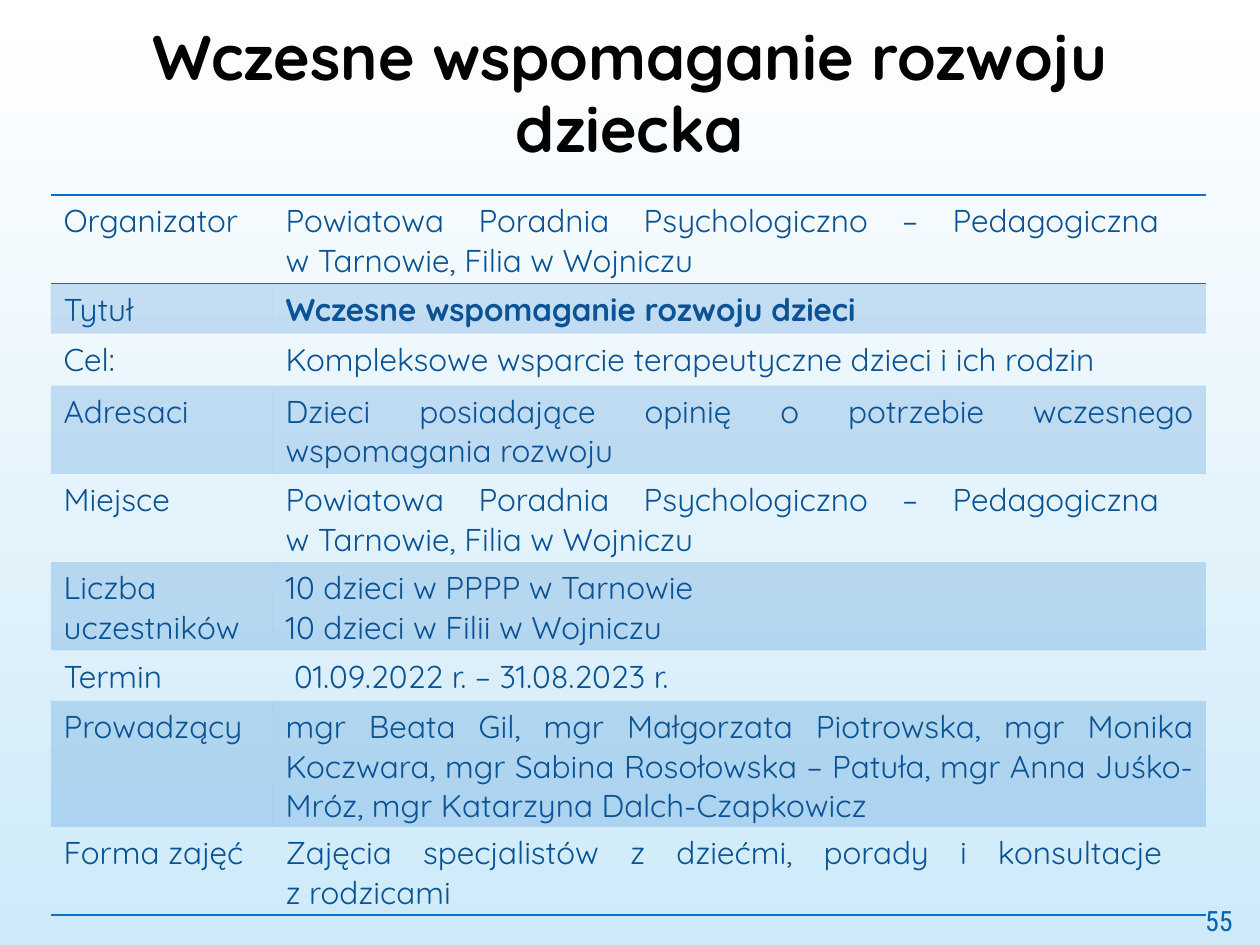
from dataclasses import dataclass
from lxml.etree import SubElement as Sub
from pptx import Presentation
from pptx.dml.color import RGBColor as RGB
from pptx.enum.text import MSO_ANCHOR as Anchor, PP_ALIGN as Align
from pptx.oxml.ns import qn
from pptx.util import Emu, Pt

# Content
TITLE = "Wczesne wspomaganie rozwoju dziecka"
PLACE = "Powiatowa Poradnia Psychologiczno – Pedagogiczna \vw Tarnowie, Filia w Wojniczu"
# label, text, row height in px
ROWS = [
    ("Organizator", PLACE, 87),
    ("Tytuł", "Wczesne wspomaganie rozwoju dzieci", 49),
    ("Cel:", "Kompleksowe wsparcie terapeutyczne dzieci i ich rodzin", 52),
    ("Adresaci", "Dzieci posiadające opinię o potrzebie wczesnego wspomagania rozwoju", 87),
    ("Miejsce", PLACE, 87),
    ("Liczba uczestników", "10 dzieci w PPPP w Tarnowie\n10 dzieci w Filii w Wojniczu", 87),
    ("Termin", " 01.09.2022 r. – 31.08.2023 r.", 50),
    ("Prowadzący", "mgr Beata Gil, mgr Małgorzata Piotrowska, mgr Monika Koczwara, "
     "mgr Sabina Rosołowska – Patuła, mgr Anna Juśko-Mróz, "
     "mgr Katarzyna Dalch-Czapkowicz", 123),
    ("Forma zajęć", "Zajęcia specjalistów z dziećmi, porady i konsultacje \vz rodzicami", 87),
]
COLS = (222, 933)
BOLD = (1, 1)  # row and column of the bold cell
PAGE = "55"


@dataclass(frozen=True)
class Theme:
    ink: str = "000000"
    text: str = "0B5394"
    line: str = "0F6FC6"
    page: str = "0065B0"
    sky: tuple = ("FFFFFF", "CEEAF9")
    font: str = "Quicksand"
    slim: str = "Roboto Condensed"
    big: int = 36
    body: int = 18
    small: int = 16
    tint: int = 20
    plain: str = "{2D5ABB26-0587-4C30-8999-92F81FD0307C}"


T = Theme()


def px(n):
    return Emu(round(n * 914400 / 126))


def write(frame, text, size=T.body, color=T.text, font=T.font, bold=False,
          align=Align.JUSTIFY, gap=None):
    frame.word_wrap = True
    frame.text = text
    for para in frame.paragraphs:
        para.alignment = align
        para.line_spacing = gap
        for run in para.runs:
            face = run.font
            face.name, face.size, face.bold = font, Pt(size), bold
            face.color.rgb = RGB.from_string(color)


def box(slide, place, text, anchor, **form):
    frame = slide.shapes.add_textbox(*map(px, place)).text_frame
    write(frame, text, **form)
    frame.vertical_anchor = anchor


def edge(cell, sides):
    props = cell._tc.get_or_add_tcPr()
    for side in "LRTB":
        line = Sub(props, qn("a:ln" + side), w=str(Pt(1)))
        if side in sides:
            Sub(Sub(line, qn("a:solidFill")), qn("a:srgbClr"), val=T.line)
        else:
            Sub(line, qn("a:noFill"))


def shade(cell, on):
    if not on:
        cell.fill.background()
        return
    cell.fill.solid()
    cell.fill.fore_color.rgb = RGB.from_string(T.line)
    color = cell._tc.tcPr.find(qn("a:solidFill"))[0]
    Sub(color, qn("a:alpha"), val=str(T.tint * 1000))


def grid(slide):
    high = sum(row[2] for row in ROWS)
    table = slide.shapes.add_table(len(ROWS), len(COLS), px(51), px(195),
                                   px(sum(COLS)), px(high)).table
    table.first_row = table.horz_banding = False
    table._tbl.tblPr.find(qn("a:tableStyleId")).text = T.plain
    for col, wide in zip(table.columns, COLS):
        col.width = px(wide)
    sides = {0: "TB", 1: "T", len(ROWS) - 1: "B"}
    for r, (label, text, tall) in enumerate(ROWS):
        table.rows[r].height = px(tall)
        for c, words in enumerate((label, text)):
            cell = table.cell(r, c)
            edge(cell, sides.get(r, ""))
            shade(cell, r % 2 == 1)
            write(cell.text_frame, words, bold=(r, c) == BOLD)


def main():
    deck = Presentation()
    deck.slide_width, deck.slide_height = px(1260), px(945)
    slide = deck.slides.add_slide(deck.slide_layouts[6])

    # Background, white at the top to pale blue
    back = slide.background.fill
    back.gradient()
    back.gradient_angle = 270
    for i, color in enumerate(T.sky):
        stop = back.gradient_stops[i]
        stop.color.rgb = RGB.from_string(color)
        stop.position = i

    # Title, table, page number
    box(slide, (35, 16, 1190, 149), TITLE, Anchor.TOP, size=T.big,
        color=T.ink, bold=True, align=Align.CENTER, gap=0.96)
    grid(slide)
    box(slide, (1174, 895, 90, 50), PAGE, Anchor.MIDDLE, size=T.small,
        color=T.page, font=T.slim, align=Align.CENTER)
    deck.save("out.pptx")


if __name__ == "__main__":
    main()
